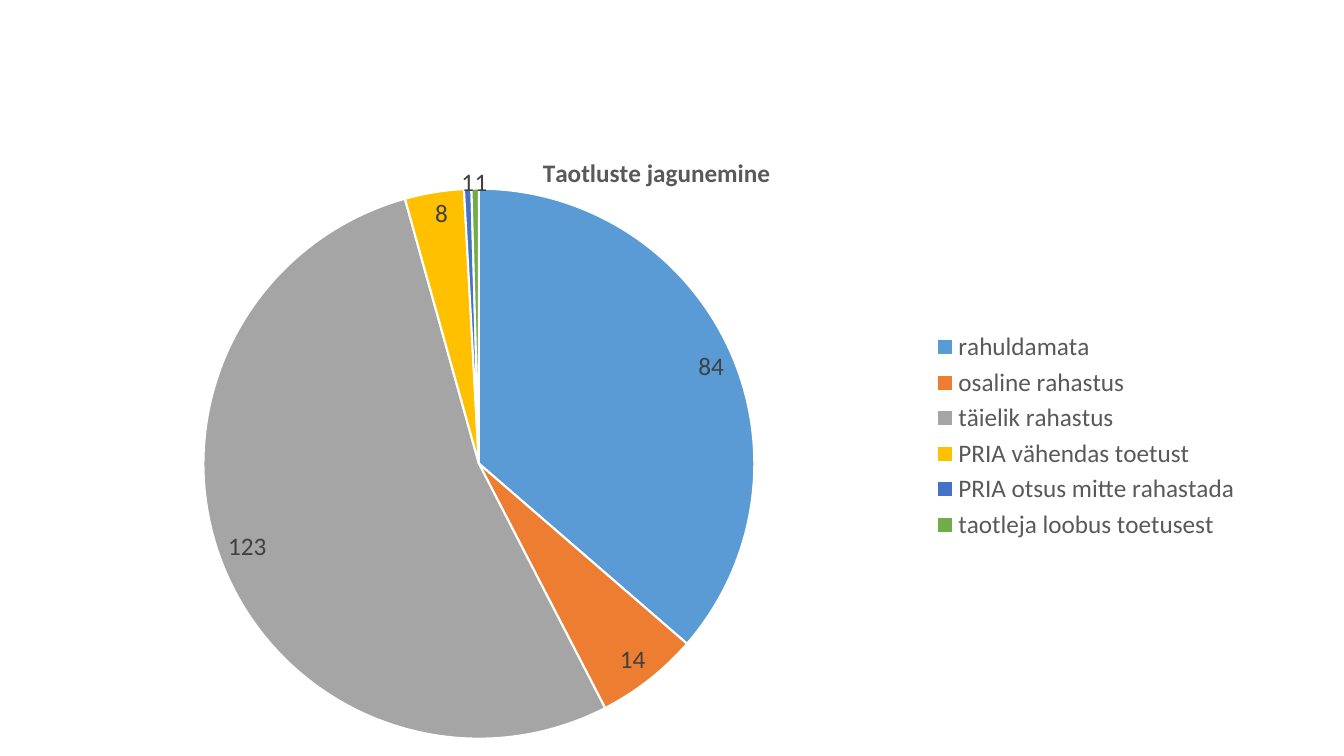
from lxml import etree
from pptx import Presentation
from pptx.chart.data import CategoryChartData
from pptx.dml.color import RGBColor
from pptx.enum import chart as chart_enum
from pptx.oxml import ns
from pptx.util import Pt

TITLE = "Taotluste jagunemine"
COLORS = {"title": "595959", "legend": "595959", "label": "404040", "border": "FFFFFF"}
# Category: (number of applications, slice colour)
SLICES = {
    "rahuldamata": (84, "5B9BD5"),
    "osaline rahastus": (14, "ED7D31"),
    "täielik rahastus": (123, "A5A5A5"),
    "PRIA vähendas toetust": (8, "FFC000"),
    "PRIA otsus mitte rahastada": (1, "4472C4"),
    "taotleja loobus toetusest": (1, "70AD47"),
}
PLOT_AREA = {"x": 0.063, "y": 0.092, "w": 0.575, "h": 0.908}
# Slice index: shift of its label, as a share of the chart size
LABEL_SHIFTS = {4: {"x": 0, "y": -0.045}, 5: {"x": 0.005, "y": -0.045}}


def style_font(font, color, bold=False):
    font.name = "Calibri"
    font.size = Pt(18)
    font.bold = bold
    font.color.rgb = RGBColor.from_string(color)


def manual_layout(values, inner=False):
    layout = etree.Element(ns.qn("c:layout"))
    manual = etree.SubElement(layout, ns.qn("c:manualLayout"))
    settings = {}
    if inner:
        settings = {"layoutTarget": "inner", "xMode": "edge", "yMode": "edge"}
    for name, value in {**settings, **values}.items():
        etree.SubElement(manual, ns.qn(f"c:{name}"), val=str(value))
    return layout


def place_plot(chart):
    plot_area = chart._chartSpace.find(".//" + ns.qn("c:plotArea"))
    for layout in plot_area.findall(ns.qn("c:layout")):
        plot_area.remove(layout)
    plot_area.insert(0, manual_layout(PLOT_AREA, inner=True))


def color_slices(series):
    for index, (_, color) in enumerate(SLICES.values()):
        slice_format = series.points[index].format
        slice_format.fill.solid()
        slice_format.fill.fore_color.rgb = RGBColor.from_string(color)
        slice_format.line.color.rgb = RGBColor.from_string(COLORS["border"])
        slice_format.line.width = Pt(1.5)


def label_slices(series):
    labels = series.data_labels
    labels.show_value = True
    labels.show_percentage = False
    labels.position = chart_enum.XL_LABEL_POSITION.INSIDE_END
    style_font(labels.font, COLORS["label"])

    # Move the labels of the thinnest slices to the rim
    for index, shift in LABEL_SHIFTS.items():
        label = series.points[index].data_label
        label.position = chart_enum.XL_LABEL_POSITION.INSIDE_END
        style_font(label.font, COLORS["label"])
        for label_index in series._element.iterfind(".//" + ns.qn("c:dLbl") + "/" + ns.qn("c:idx")):
            if label_index.get("val") == str(index):
                label_index.addnext(manual_layout(shift))


def add_pie(slide, left, top, width, height):
    data = CategoryChartData()
    data.categories = list(SLICES)
    data.add_series(TITLE, [value for value, _ in SLICES.values()])
    chart = slide.shapes.add_chart(
        chart_enum.XL_CHART_TYPE.PIE, Pt(left), Pt(top), Pt(width), Pt(height), data
    ).chart

    # Title
    chart.has_title = True
    title_frame = chart.chart_title.text_frame
    title_frame.text = TITLE
    style_font(title_frame.paragraphs[0].font, COLORS["title"], bold=True)

    # Legend
    chart.has_legend = True
    chart.legend.position = chart_enum.XL_LEGEND_POSITION.RIGHT
    chart.legend.include_in_layout = False
    style_font(chart.legend.font, COLORS["legend"])

    # Pie
    place_plot(chart)
    plot = chart.plots[0]
    plot.vary_by_categories = True
    color_slices(plot.series[0])
    label_slices(plot.series[0])


def main():
    presentation = Presentation()
    presentation.slide_width = Pt(960)
    presentation.slide_height = Pt(540)
    slide = presentation.slides.add_slide(presentation.slide_layouts[6])
    add_pie(slide, 44.6, 95, 848.9, 433.4)
    presentation.save("out.pptx")


if __name__ == "__main__":
    main()
